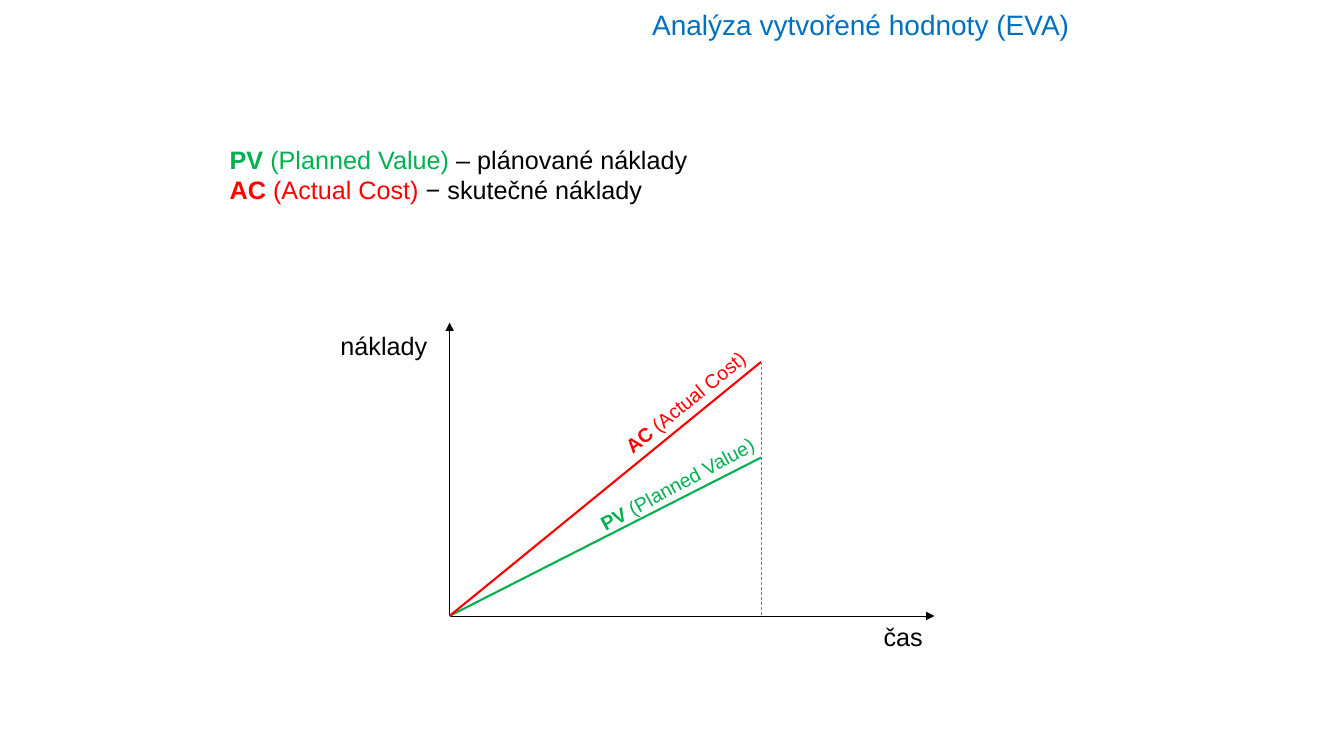
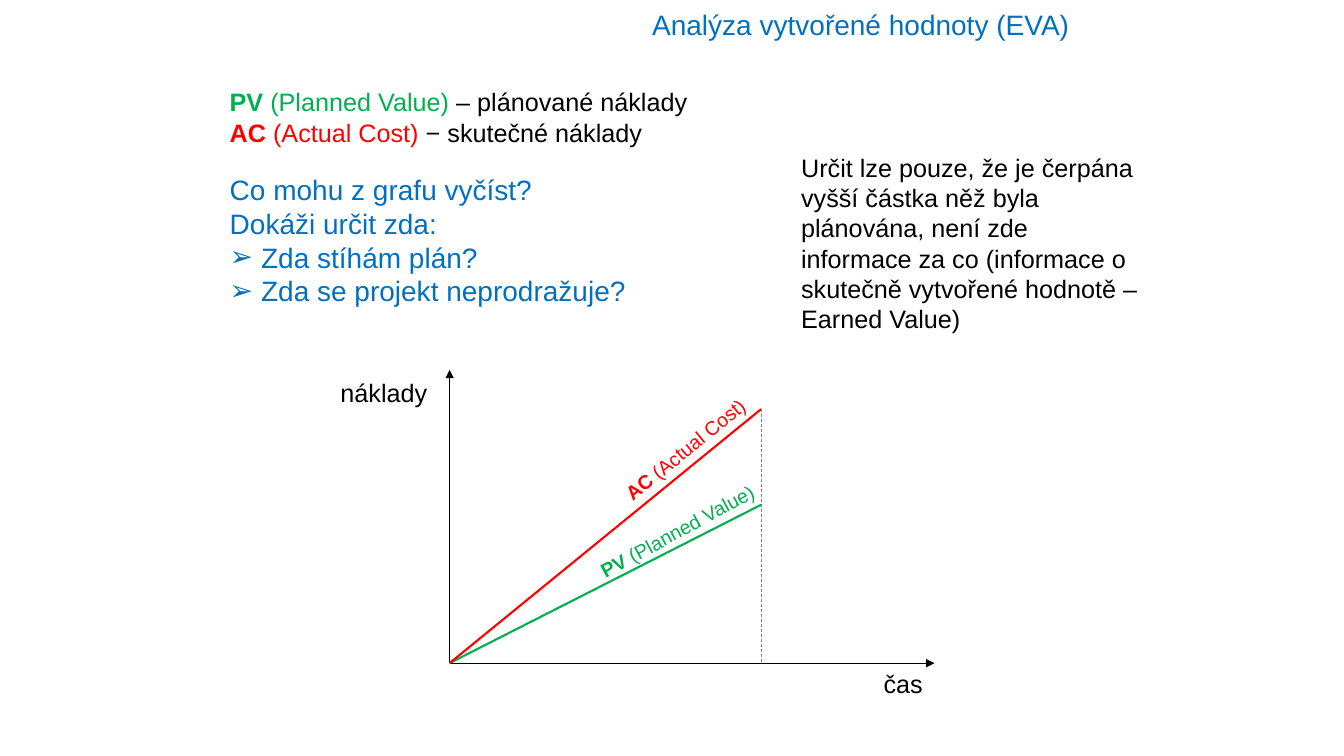
import pptx
import pptx.dml.color
import pptx.enum.dml
import pptx.enum.shapes
import pptx.enum.text
import pptx.oxml.ns
import pptx.util
from lxml import etree

Cm = pptx.util.Cm
Pt = pptx.util.Pt
RGBColor = pptx.dml.color.RGBColor

BLUE = RGBColor(0x00, 0x70, 0xC0)
GREEN = RGBColor(0x00, 0xB0, 0x50)
RED = RGBColor(0xFF, 0x00, 0x00)
BLACK = RGBColor(0x00, 0x00, 0x00)
GRAY = RGBColor(0x80, 0x80, 0x80)
FONT = "Arial"


def add_span(para, text, size=18, color=BLACK, bold=False):
    span = para.add_run()
    span.text = text
    span.font.name = FONT
    span.font.size = Pt(size)
    span.font.bold = bold
    span.font.color.rgb = color


def add_child(parent, tag, **attributes):
    child = etree.SubElement(parent, pptx.oxml.ns.qn(tag))
    for name, value in attributes.items():
        child.set(name, value)


class SlideWriter:
    """Holds the deck's style and the slide being written."""

    def __init__(self, deck):
        self.deck = deck
        self.page = None

    def start(self, title):
        self.page = self.deck.slides.add_slide(self.deck.slide_layouts[5])
        box = self.page.shapes.title
        box.left, box.top, box.width, box.height = Cm(16.18), Cm(0.05), Cm(17.5), Cm(1.12)
        frame = box.text_frame
        frame.auto_size = pptx.enum.text.MSO_AUTO_SIZE.NONE
        frame.vertical_anchor = pptx.enum.text.MSO_ANCHOR.TOP
        para = frame.paragraphs[0]
        para.alignment = pptx.enum.text.PP_ALIGN.LEFT
        add_span(para, title, size=20, color=BLUE)

    def text(self, left, top, width, height, paragraphs, wrap=True, rotation=0):
        """Each paragraph is a list of (text, format) pairs."""
        box = self.page.shapes.add_textbox(Cm(left), Cm(top), Cm(width), Cm(height))
        box.rotation = rotation
        frame = box.text_frame
        frame.word_wrap = wrap
        for index, spans in enumerate(paragraphs):
            para = frame.add_paragraph() if index else frame.paragraphs[0]
            for text, style in spans:
                add_span(para, text, **style)
        return frame.paragraphs

    def bullet(self, para):
        properties = para._p.get_or_add_pPr()
        properties.set("marL", str(Cm(0.79)))
        properties.set("indent", str(-Cm(0.79)))
        add_child(properties, "a:buFont", typeface=FONT)
        add_child(properties, "a:buChar", char="➢")

    def line(self, start, end, color=BLACK, width=0.5, arrow=False, dashed=False):
        points = [Cm(value) for value in (*start, *end)]
        line = self.page.shapes.add_connector(
            pptx.enum.shapes.MSO_CONNECTOR.STRAIGHT, *points)
        line.line.color.rgb = color
        line.line.width = Pt(width)
        if dashed:
            line.line.dash_style = pptx.enum.dml.MSO_LINE.DASH
        if arrow:
            add_child(line.line._get_or_add_ln(), "a:tailEnd", type="triangle")
        add_child(line._element.spPr, "a:effectLst")

    def cost_graph(self, base):
        """Draws the cost lines over time; base is the height of the time axis."""
        left, right = 11.33, 19.18
        origin = (left, base)
        planned_end, actual_end = (right, base - 3.99), (right, base - 6.4)

        # Axes
        self.line(origin, (left, base - 7.39), arrow=True)
        self.line(origin, (left + 12.22, base), arrow=True)

        # Cost lines and the date of measurement
        self.line(origin, planned_end, GREEN, 1.5)
        self.line(origin, actual_end, RED, 1.5)
        self.line(actual_end, (right, base), GRAY, dashed=True)

        # Labels
        self.text(8.33, base - 7.32, 2.72, 1.02, [[("náklady", {})]], wrap=False)
        self.text(22.02, base, 1.5, 1.02, [[("čas", {})]], wrap=False)
        self.text(15.16, base - 5.82, 4.24, 0.86,
                  [term("AC ", "(Actual Cost)", RED, 14)], wrap=False, rotation=320.9)
        self.text(14.66, base - 3.76, 4.85, 0.86,
                  [term("PV", " (Planned Value)", GREEN, 14)], wrap=False, rotation=331.5)


def term(short, full, color, size=18):
    return [(short, dict(size=size, color=color, bold=True)),
            (full, dict(size=size, color=color))]


TITLE = "Analýza vytvořené hodnoty (EVA)"
DEFINITIONS = [
    term("PV", " (Planned Value) ", GREEN) + [("– plánované náklady", {})],
    term("AC ", "(Actual Cost) ", RED) + [("− skutečné náklady", {})],
]
QUESTIONS = [
    "Co mohu z grafu vyčíst?",
    "Dokáži určit zda:",
    "Zda stíhám plán?",
    "Zda se projekt neprodražuje?",
]
ANSWER = ("Určit lze pouze, že je čerpána vyšší částka něž byla plánována, "
          "není zde informace za co (informace o skutečně vytvořené hodnotě – "
          "Earned Value)")


def main():
    deck = pptx.Presentation()
    deck.slide_width, deck.slide_height = Cm(33.87), Cm(19.05)
    writer = SlideWriter(deck)

    # Definitions and graph
    writer.start(TITLE)
    writer.text(5.54, 3.5, 14, 1.8, DEFINITIONS)
    writer.cost_graph(15.52)

    # Questions and answer
    writer.start(TITLE)
    questions = [[(text, dict(size=20, color=BLUE))] for text in QUESTIONS]
    paras = writer.text(5.54, 2.06, 14, 6.58, DEFINITIONS + questions)
    paras[len(DEFINITIONS)].space_before = Pt(18.4)
    for para in paras[-2:]:
        writer.bullet(para)
    writer.cost_graph(16.71)
    writer.text(19.94, 3.71, 9, 4.88, [[(ANSWER, {})]])

    deck.save("out.pptx")


if __name__ == "__main__":
    main()
